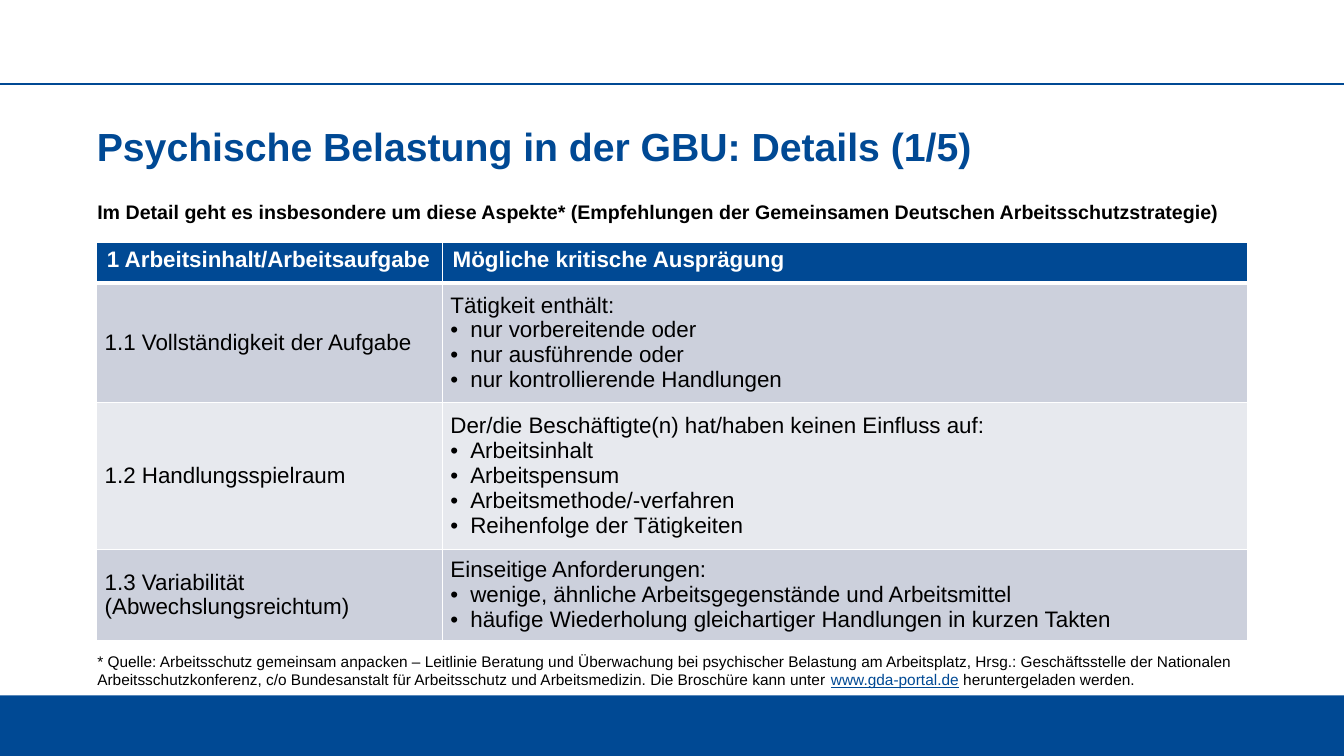
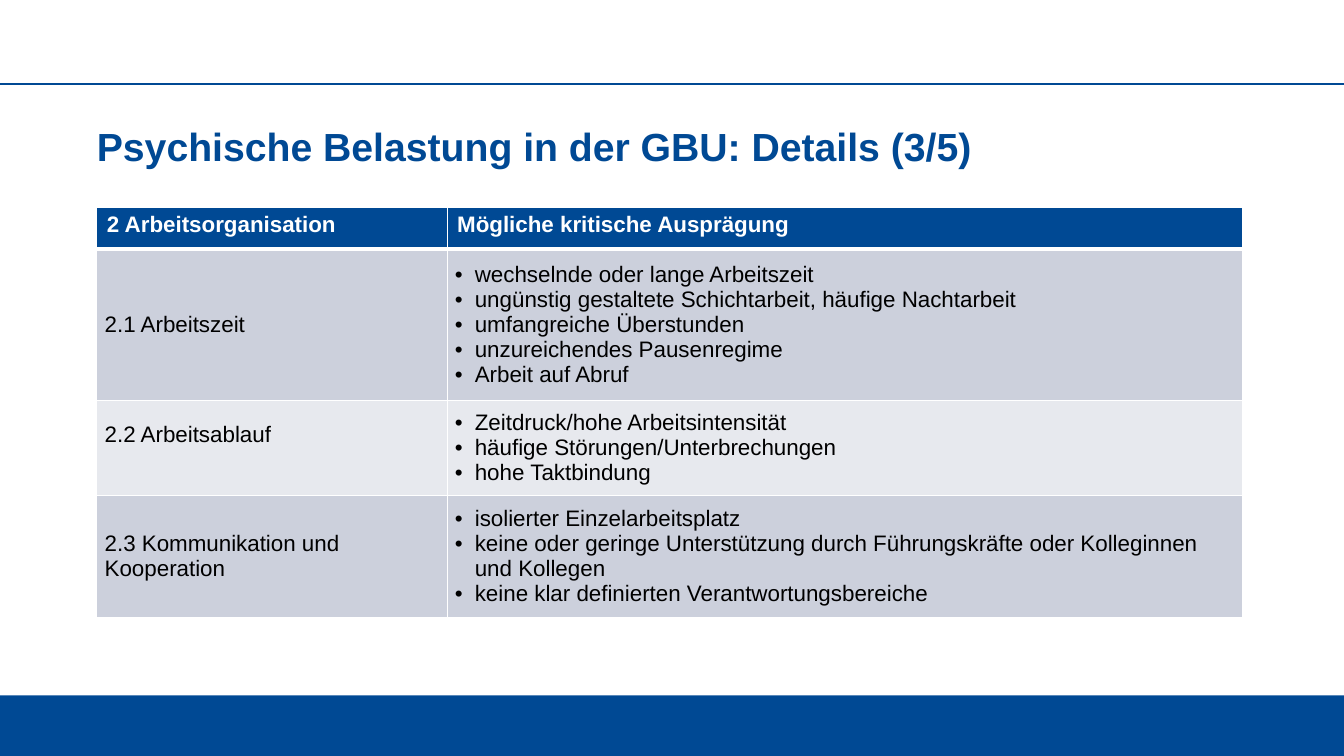
import pptx
import pptx.dml.color
import pptx.enum.shapes
import pptx.enum.text
import pptx.oxml
import pptx.oxml.ns
import pptx.util

Pt = pptx.util.Pt
RGB = pptx.dml.color.RGBColor
ANCHOR = pptx.enum.text.MSO_ANCHOR

BLUE = RGB(0x00, 0x49, 0x94)
WHITE = RGB(0xFF, 0xFF, 0xFF)
BLACK = RGB(0x00, 0x00, 0x00)
ROW_FILLS = (RGB(0xCC, 0xD0, 0xDC), RGB(0xE7, 0xE9, 0xEE))
FONT = "Arial"

WIDTH, HEIGHT = 960, 540
LEFT = 69.2
TEXT_LEFT = 62.4
BAND_HEIGHT = 43.2
RULE_TOP = 60
HEADER_HEIGHT = 29.5
CELL_INSET = 5.6
BULLET_INDENT = 14.2
TABLE_SIZE = 16

INTRO = ("Im Detail geht es insbesondere um diese Aspekte* "
         "(Empfehlungen der Gemeinsamen Deutschen Arbeitsschutzstrategie)")
SOURCE = (
    "* Quelle: Arbeitsschutz gemeinsam anpacken – Leitlinie Beratung und Überwachung "
    "bei psychischer Belastung am Arbeitsplatz, Hrsg.: Geschäftsstelle der Nationalen "
    "Arbeitsschutzkonferenz, c/o Bundesanstalt für Arbeitsschutz und Arbeitsmedizin. "
    "Die Broschüre kann unter ",
    "www.gda-portal.de",
    " heruntergeladen werden.",
)

SLIDES = [
    {
        "title": "Psychische Belastung in der GBU: Details (1/5)",
        "top": 172.8,
        "columns": (247, 575.2),
        "topic": "1 Arbeitsinhalt/Arbeitsaufgabe",
        "rows": [
            (85, "1.1 Vollständigkeit der Aufgabe", "Tätigkeit enthält:",
             ["nur vorbereitende oder", "nur ausführende oder",
              "nur kontrollierende Handlungen"]),
            (105, "1.2 Handlungsspielraum",
             "Der/die Beschäftigte(n) hat/haben keinen Einfluss auf:",
             ["Arbeitsinhalt", "Arbeitspensum", "Arbeitsmethode/-verfahren",
              "Reihenfolge der Tätigkeiten"]),
            (65.2, "1.3 Variabilität (Abwechslungsreichtum)",
             "Einseitige Anforderungen:",
             ["wenige, ähnliche Arbeitsgegenstände und Arbeitsmittel",
              "häufige Wiederholung gleichartiger Handlungen in kurzen Takten"]),
        ],
        "intro": INTRO,
        "source": SOURCE,
    },
    {
        "title": "Psychische Belastung in der GBU: Details (3/5)",
        "top": 148.4,
        "columns": (250.2, 568.2),
        "topic": "2 Arbeitsorganisation",
        "rows": [
            (108, "2.1 Arbeitszeit", None,
             ["wechselnde oder lange Arbeitszeit",
              "ungünstig gestaltete Schichtarbeit, häufige Nachtarbeit",
              "umfangreiche Überstunden", "unzureichendes Pausenregime",
              "Arbeit auf Abruf"]),
            (67.8, "2.2 Arbeitsablauf", None,
             ["Zeitdruck/hohe Arbeitsintensität",
              "häufige Störungen/Unterbrechungen", "hohe Taktbindung"]),
            (87.8, "2.3 Kommunikation und Kooperation", None,
             ["isolierter Einzelarbeitsplatz",
              "keine oder geringe Unterstützung durch Führungskräfte oder "
              "Kolleginnen und Kollegen",
              "keine klar definierten Verantwortungsbereiche"]),
        ],
        "raised": "2.2 Arbeitsablauf",
    },
]


def set_font(p, size, color, bold=False):
    p.font.name = FONT
    p.font.size = Pt(size)
    p.font.bold = bold
    p.font.color.rgb = color


def add_element(parent, tag, **attributes):
    element = parent.makeelement(pptx.oxml.ns.qn(tag), attributes)
    parent.append(element)
    return element


def add_bullet(p):
    pPr = p._p.get_or_add_pPr()
    pPr.set("marL", str(Pt(BULLET_INDENT)))
    pPr.set("indent", str(-Pt(BULLET_INDENT)))
    add_element(pPr, "a:buFont", typeface=FONT)
    add_element(pPr, "a:buChar", char="•")


def set_borders(cell, top, bottom):
    tcPr = cell._tc.get_or_add_tcPr()
    sides = (("L", 1), ("R", 1), ("T", top), ("B", bottom))
    for index, (side, width) in enumerate(sides):
        ln = add_element(tcPr, f"a:ln{side}", w=str(Pt(width)))
        fill = add_element(ln, "a:solidFill")
        add_element(fill, "a:srgbClr", val=str(WHITE))
        tcPr.insert(index, ln)


def fill_cell(cell, lines, row, bullets=()):
    header = row == 0
    cell.fill.solid()
    cell.fill.fore_color.rgb = BLUE if header else ROW_FILLS[(row - 1) % 2]
    set_borders(cell, 3 if row == 1 else 1, 3 if header else 1)
    if not header:
        cell.vertical_anchor = ANCHOR.MIDDLE
        cell.margin_left = cell.margin_right = Pt(CELL_INSET)
        cell.margin_top = cell.margin_bottom = 0
    tf = cell.text_frame
    for index, text in enumerate([*lines, *bullets]):
        p = tf.add_paragraph() if index else tf.paragraphs[0]
        p.text = text
        if index >= len(lines):
            add_bullet(p)
        set_font(p, TABLE_SIZE, WHITE if header else BLACK, header)


def add_aspect_table(s, content):
    rows, columns = content["rows"], content["columns"]
    heights = [HEADER_HEIGHT] + [row[0] for row in rows]
    table = s.shapes.add_table(
        len(heights), len(columns), Pt(LEFT), Pt(content["top"]),
        Pt(sum(columns)), Pt(sum(heights))).table
    for column, width in zip(table.columns, columns):
        column.width = Pt(width)
    for row, height in zip(table.rows, heights):
        row.height = Pt(height)
    fill_cell(table.cell(0, 0), [content["topic"]], 0)
    fill_cell(table.cell(0, 1), ["Mögliche kritische Ausprägung"], 0)
    for row, (_, aspect, lead, bullets) in enumerate(rows, 1):
        fill_cell(table.cell(row, 0), [aspect], row)
        fill_cell(table.cell(row, 1), [lead] if lead else [], row, bullets)
        if aspect == content.get("raised"):
            table.cell(row, 0).margin_bottom = Pt(18)


def add_text(s, top, width, height, texts, size, bold=False):
    tf = s.shapes.add_textbox(Pt(TEXT_LEFT), Pt(top), Pt(width), Pt(height)).text_frame
    tf.word_wrap = True
    p = tf.paragraphs[0]
    set_font(p, size, BLACK, bold)
    for text in texts:
        r = p.add_run()
        r.text = text
        if text.startswith("www."):
            r.font.color.rgb = BLUE
            r.font.underline = True


def decorate_master(prs, s):
    band = s.shapes.add_shape(
        pptx.enum.shapes.MSO_SHAPE.RECTANGLE, 0, Pt(HEIGHT - BAND_HEIGHT),
        Pt(WIDTH), Pt(BAND_HEIGHT))
    band.shadow.inherit = False
    band.fill.solid()
    band.fill.fore_color.rgb = BLUE
    band.line.fill.background()
    rule = s.shapes.add_connector(
        pptx.enum.shapes.MSO_CONNECTOR.STRAIGHT, 0, Pt(RULE_TOP), Pt(WIDTH), Pt(RULE_TOP))
    rule.line.color.rgb = BLUE
    rule.line.width = Pt(2)
    add_element(rule.element.spPr, "a:effectLst")
    for index, sp in enumerate((band, rule)):
        sp.element.xpath("./*/p:cNvPr")[0].set("id", str(101 + index))
        prs.slide_master.shapes.element.insert(2 + index, sp.element)


def set_title(s, text):
    title = s.shapes.title
    title.left, title.top, title.width, title.height = map(Pt, (LEFT, 91.4, 822.2, 41))
    tf = title.text_frame
    tf.margin_left = tf.margin_top = 0
    tf.margin_right, tf.margin_bottom = Pt(7.2), Pt(3.6)
    tf.vertical_anchor = ANCHOR.TOP
    tf.auto_size = pptx.enum.text.MSO_AUTO_SIZE.NONE
    tf.word_wrap = True
    p = tf.paragraphs[0]
    p.text = text
    p.alignment = pptx.enum.text.PP_ALIGN.LEFT
    p.line_spacing = 0.9
    set_font(p, 28, BLUE, True)


def main():
    prs = pptx.Presentation()
    prs.slide_width, prs.slide_height = Pt(WIDTH), Pt(HEIGHT)
    for index, content in enumerate(SLIDES):
        s = prs.slides.add_slide(prs.slide_layouts[5])
        if index == 0:
            decorate_master(prs, s)
        set_title(s, content["title"])
        add_aspect_table(s, content)
        if "intro" in content:
            add_text(s, 139, 822.2, 24.5, [content["intro"]], 14, True)
        if "source" in content:
            add_text(s, 462.2, 828.7, 33.8, content["source"], 11)
    prs.save("out.pptx")


if __name__ == "__main__":
    main()
